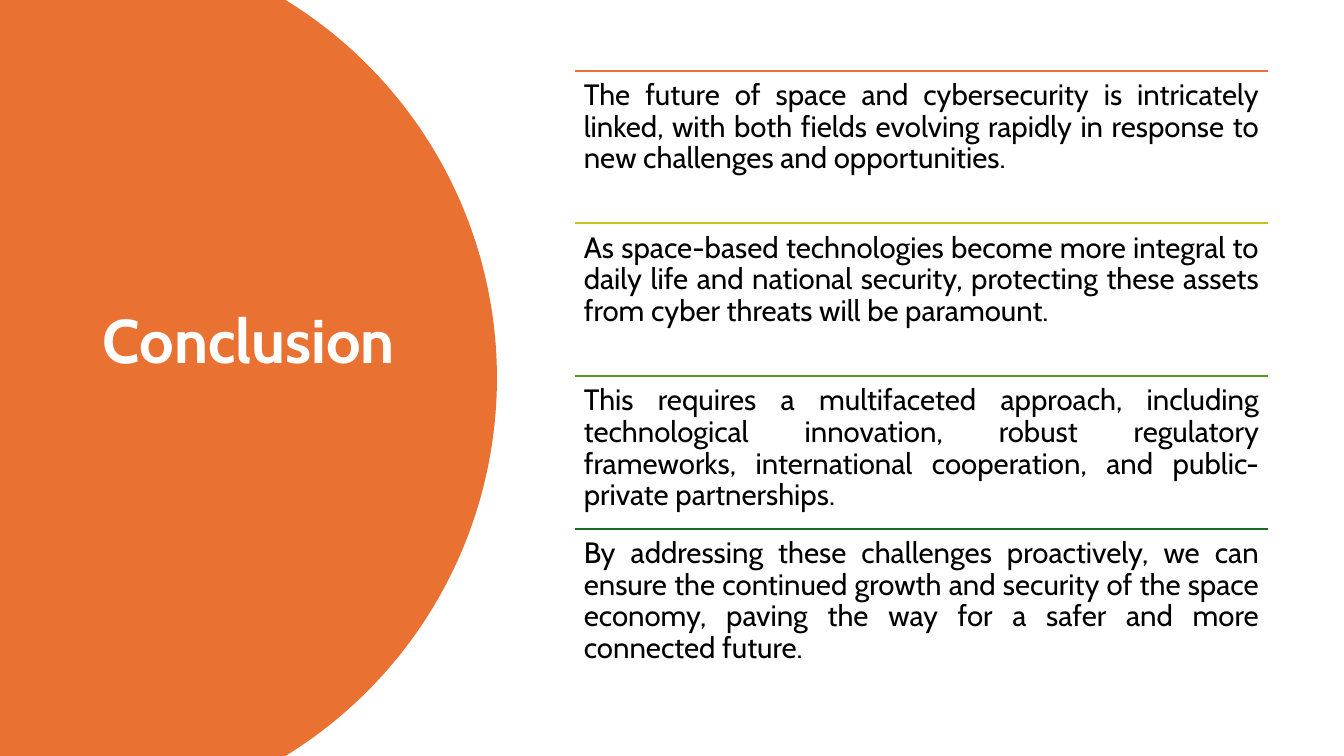
"""Build the Conclusion slide: a cut-off disc with the title beside four ruled statements."""
import math
from dataclasses import dataclass

from lxml import etree
from pptx import Presentation
from pptx import util as u
from pptx.dml.color import RGBColor
from pptx.enum import shapes, text
from pptx.oxml import ns

FONT = "Cabin"
SLIDE_W, SLIDE_H = 960, 540
DISC_X, DISC_R = 38.2, 316.8
ARC_STEPS = 120
LIST_X, LIST_Y, LIST_W, ROW_H = 410.4, 50.6, 495.4, 109
INSET = 6.6


@dataclass
class Statement:
    color: str
    body: str


STATEMENTS = [
    Statement("E97132", "The future of space and cybersecurity is intricately linked, with both "
              "fields evolving rapidly in response to new challenges and opportunities."),
    Statement("CBC11E", "As space-based technologies become more integral to daily life and "
              "national security, protecting these assets from cyber threats will be paramount."),
    Statement("56991D", "This requires a multifaceted approach, including technological "
              "innovation, robust regulatory frameworks, international cooperation, and "
              "public-private partnerships."),
    Statement("196B24", "By addressing these challenges proactively, we can ensure the continued "
              "growth and security of the space economy, paving the way for a safer and more "
              "connected future."),
]


def rgb(value: str) -> RGBColor:
    return RGBColor.from_string(value)


def add_disc(s, color: str) -> None:
    half = math.asin(SLIDE_H / 2 / DISC_R)
    angles = [half * (2 * i / ARC_STEPS - 1) for i in range(ARC_STEPS + 1)]
    arc = [(100 * (DISC_X + DISC_R * math.cos(a)),
            100 * (SLIDE_H / 2 + DISC_R * math.sin(a))) for a in angles]
    builder = s.shapes.build_freeform(0, 0, scale=u.Pt(1) / 100)
    builder.add_line_segments(arc + [(0, 100 * SLIDE_H)], close=True)
    sp = builder.convert_to_shape()
    sp.shadow.inherit = False
    sp.fill.solid()
    sp.fill.fore_color.rgb = rgb(color)
    sp.line.fill.background()


def add_rule(s, x: float, y: float, width: float, color: str) -> None:
    sp = s.shapes.add_connector(shapes.MSO_CONNECTOR.STRAIGHT,
                                u.Pt(x), u.Pt(y), u.Pt(x + width), u.Pt(y))
    sp.line.color.rgb = rgb(color)
    sp.line.width = u.Pt(1.5)
    etree.SubElement(sp._element.spPr, ns.qn("a:effectLst"))


def add_text(s, x: float, y: float, width: float, height: float, body: str,
             size: float, color: str, bold: bool = False):
    tf = s.shapes.add_textbox(u.Pt(x), u.Pt(y), u.Pt(width), u.Pt(height)).text_frame
    tf.word_wrap = True
    p = tf.paragraphs[0]
    p.line_spacing = 0.9
    r = p.add_run()
    r.text = body
    r.font.name = FONT
    r.font.size = u.Pt(size)
    r.font.bold = bold
    r.font.color.rgb = rgb(color)
    return tf


def add_title(s, body: str) -> None:
    tf = add_text(s, 66.2, 50.4, 232.6, 438.5, body, 44, "FFFFFF", bold=True)
    tf.vertical_anchor = text.MSO_ANCHOR.MIDDLE
    tf.margin_bottom = u.Pt(52)


def add_statement(s, y: float, item: Statement) -> None:
    add_rule(s, LIST_X, y, LIST_W, item.color)
    tf = add_text(s, LIST_X, y, LIST_W, ROW_H, item.body, 21, "000000")
    tf.margin_left = tf.margin_right = tf.margin_top = tf.margin_bottom = u.Pt(INSET)
    tf.paragraphs[0].alignment = text.PP_ALIGN.JUSTIFY


def main() -> None:
    prs = Presentation()
    prs.slide_width, prs.slide_height = u.Pt(SLIDE_W), u.Pt(SLIDE_H)
    s = prs.slides.add_slide(prs.slide_layouts[6])
    add_disc(s, "E97132")
    add_title(s, "Conclusion")
    for i, item in enumerate(STATEMENTS):
        add_statement(s, LIST_Y + i * ROW_H, item)
    prs.save("out.pptx")


if __name__ == "__main__":
    main()
